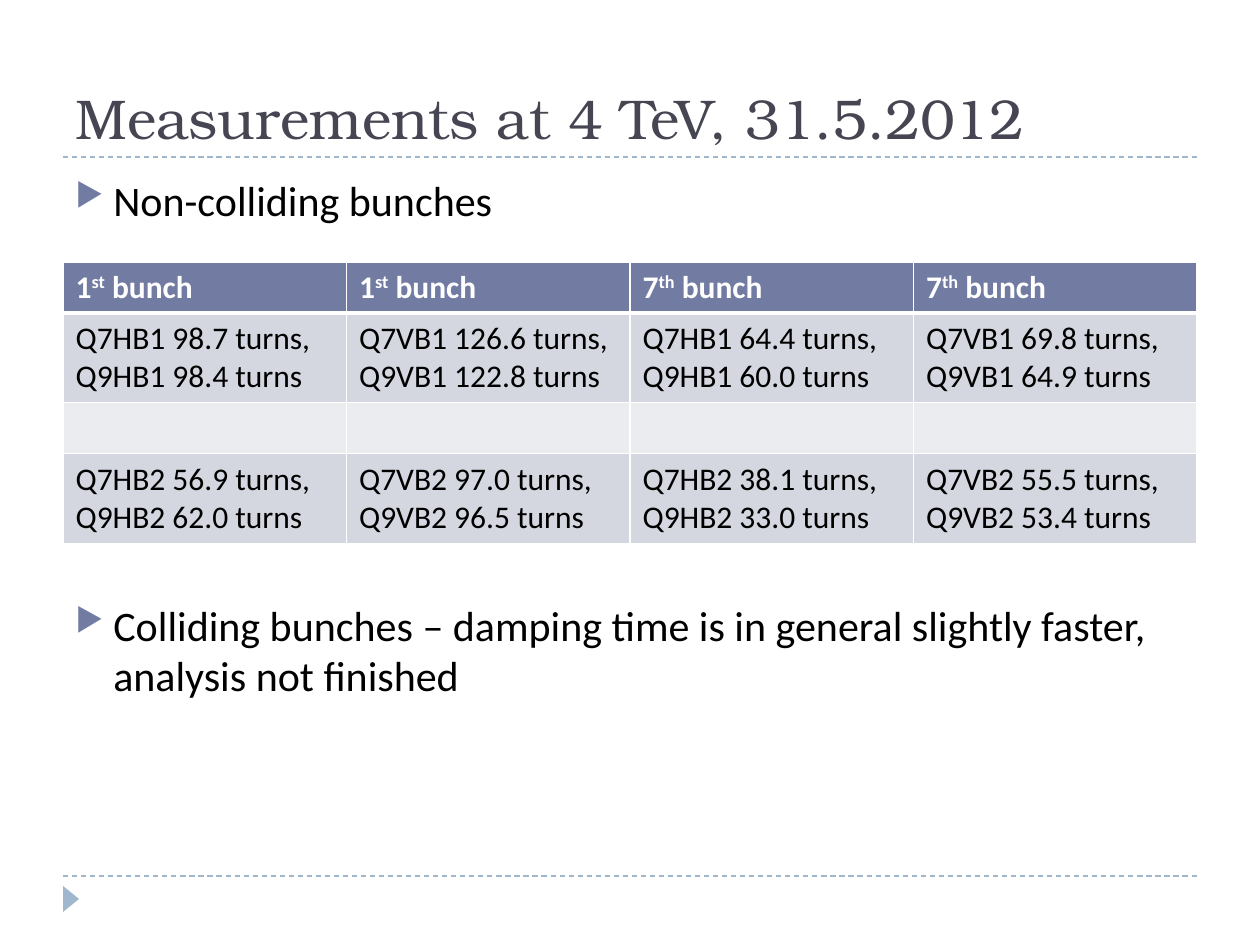
from lxml.etree import SubElement
from pptx import Presentation
from pptx.dml.color import RGBColor
from pptx.enum.dml import MSO_LINE
from pptx.enum.shapes import MSO_CONNECTOR, MSO_SHAPE
from pptx.enum.text import MSO_ANCHOR, MSO_AUTO_SIZE, PP_ALIGN
from pptx.oxml.ns import qn
from pptx.util import Pt


def px(n):
    return round(n * 914400 / 126)


def rgb(value):
    return RGBColor.from_string(value)


def sub(parent, tag, **attrs):
    return SubElement(parent, qn(tag), {k: str(v) for k, v in attrs.items()})


class Deck:
    HEAD_FONT, BODY_FONT = "TeX Gyre Bonum", "Calibri"
    INK, WHITE, BLACK = "464653", "FFFFFF", "000000"
    ACCENT, PALE = "727CA3", "9FB8CD"
    BANDS = "D5D7E0", "EBECF0"

    def __init__(self):
        self.prs = Presentation()
        self.prs.slide_width, self.prs.slide_height = px(1260), px(945)
        self.s = self.prs.slides.add_slide(self.prs.slide_layouts[5])

    def run(self, p, text, size, color, font=BODY_FONT, bold=False, base=0):
        r = p.add_run()
        r.text = text
        f = r.font
        f.name, f.size, f.bold = font, Pt(size), bold
        f.color.rgb = rgb(color)
        if base:
            f._element.set("baseline", str(base * 1000))

    def title(self, text, *box):
        sp = self.s.shapes.title
        sp.left, sp.top, sp.width, sp.height = map(px, box)
        tf = sp.text_frame
        tf.auto_size = MSO_AUTO_SIZE.NONE
        tf.vertical_anchor = MSO_ANCHOR.BOTTOM
        p = tf.paragraphs[0]
        p.alignment = PP_ALIGN.LEFT
        self.run(p, text, 32, self.INK, self.HEAD_FONT)

    def rule(self, x1, x2, y):
        c = self.s.shapes.add_connector(MSO_CONNECTOR.STRAIGHT, px(x1), px(y), px(x2), px(y))
        c.line.color.rgb = rgb(self.PALE)
        c.line.width = Pt(0.75)
        c.line.dash_style = MSO_LINE.DASH
        sub(c._element.spPr, "a:effectLst")

    def triangle(self, *box):
        sp = self.s.shapes.add_shape(MSO_SHAPE.ISOSCELES_TRIANGLE, *map(px, box))
        sp.rotation = 90
        sp.shadow.inherit = False
        sp.fill.solid()
        sp.fill.fore_color.rgb = rgb(self.PALE)
        sp.line.fill.background()

    def bullets(self, items, *box):
        tf = self.s.shapes.add_textbox(*map(px, box)).text_frame
        tf.word_wrap = True
        for i, (text, before) in enumerate(items):
            p = tf.add_paragraph() if i else tf.paragraphs[0]
            p.space_before = Pt(before)
            pPr = p._p.get_or_add_pPr()
            pPr.set("marL", str(px(38)))
            pPr.set("indent", str(-px(38)))
            sub(sub(pPr, "a:buClr"), "a:srgbClr", val=self.ACCENT)
            sub(pPr, "a:buSzPct", val=76000)
            sub(pPr, "a:buChar", char="▶")
            self.run(p, text, 24, self.BLACK)

    def cell(self, cell, runs, fill, color, bold, top, bottom):
        tcPr = cell._tc.get_or_add_tcPr()
        for side, width in zip("LRTB", (1, 1, top, bottom)):
            ln = sub(tcPr, f"a:ln{side}", w=Pt(width))
            sub(sub(ln, "a:solidFill"), "a:srgbClr", val=self.WHITE)
        cell.fill.solid()
        cell.fill.fore_color.rgb = rgb(fill)
        p = cell.text_frame.paragraphs[0]
        p.font.size = Pt(18)
        for text, base in runs:
            self.run(p, text, 18, color, bold=bold, base=base)

    def table(self, head, body, heights, *box):
        rows = [head] + body
        t = self.s.shapes.add_table(len(rows), len(head), *map(px, box)).table
        for i, (row, height) in enumerate(zip(rows, heights)):
            t.rows[i].height = px(height)
            for j, runs in enumerate(row):
                if i == 0:
                    style = self.ACCENT, self.WHITE, True, 1, 3
                else:
                    style = self.BANDS[(i - 1) % 2], self.BLACK, False, 3 if i == 1 else 1, 1
                self.cell(t.cell(i, j), runs, *style)


def readings(beam, values):
    return [[(f"Q7{plane}{beam} {q7} turns, Q9{plane}{beam} {q9} turns", 0)]
            for plane, (q7, q9) in zip("HVHV", values)]


def main():
    d = Deck()
    d.rule(63, 1197, 876)
    d.rule(63, 1197, 157)
    d.triangle(58, 891, 26, 16)
    d.title("Measurements at 4 TeV, 31.5.2012", 63, 21, 1134, 136)
    head = [[(n, 0), (suffix, 30), (" bunch", 0)]
            for n, suffix in (("1", "st"), ("1", "st"), ("7", "th"), ("7", "th"))]
    body = [
        readings("B1", [("98.7", "98.4"), ("126.6", "122.8"), ("64.4", "60.0"), ("69.8", "64.9")]),
        [[]] * 4,
        readings("B2", [("56.9", "62.0"), ("97.0", "96.5"), ("38.1", "33.0"), ("55.5", "53.4")]),
    ]
    d.table(head, body, (51, 89, 51, 89), 63, 262, 1134, 280)
    d.bullets([
        ("Non-colliding bunches", 6),
        ("Colliding bunches – damping time is in general slightly faster, analysis not finished", 214),
    ], 63, 168, 1134, 680)
    d.prs.save("out.pptx")


if __name__ == "__main__":
    main()
